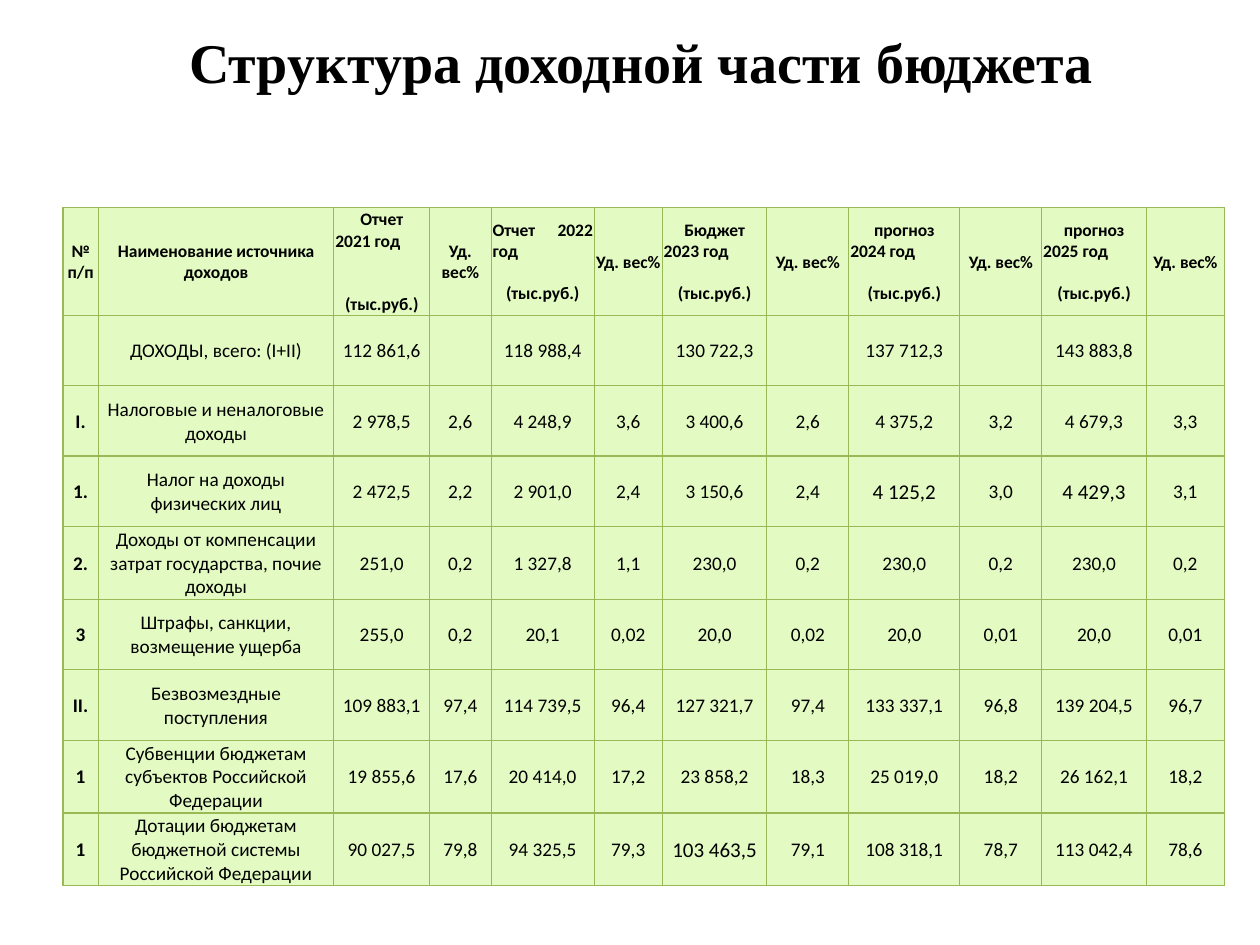
from lxml import etree
from pptx import Presentation
from pptx.dml.color import RGBColor
from pptx.enum.text import MSO_ANCHOR, MSO_AUTO_SIZE, PP_ALIGN
from pptx.oxml.ns import qn
from pptx.util import Cm, Pt

CENTER, LEFT, JUSTIFY = PP_ALIGN.CENTER, PP_ALIGN.LEFT, PP_ALIGN.JUSTIFY
MIDDLE = MSO_ANCHOR.MIDDLE
NO_AUTOFIT = MSO_AUTO_SIZE.NONE
TITLE_ONLY = 5

COLORS = {"text": "000000", "cell": "E3FBC2", "border": "98B955"}
COLUMN_WIDTHS = [0.71, 4.75, 1.93, 1.24, 2.08, 1.37, 2.11, 1.65, 2.24, 1.65, 2.11, 1.57]
HEADER_HEIGHT, ROW_HEIGHT = 2.15, 1.42

SHARE = "Уд. вес%"
UNIT = "(тыс.руб.)"
# Period heading lines with their alignment, and the gap in points above the unit
PERIODS = [
    ([("Отчет", CENTER), ("2021 год", LEFT)], 24),
    ([("Отчет 2022 год", JUSTIFY)], 12),
    ([("Бюджет", CENTER), ("2023 год", LEFT)], 12),
    ([("прогноз", CENTER), ("2024 год", LEFT)], 12),
    ([("прогноз", CENTER), ("2025 год", LEFT)], 12),
]
INCOME_ROWS = [
    ["", "ДОХОДЫ, всего: (I+II)", "112 861,6", "", "118 988,4", "",
     "130 722,3", "", "137 712,3", "", "143 883,8", ""],
    ["I.", "Налоговые и неналоговые доходы", "2 978,5", "2,6", "4 248,9", "3,6",
     "3 400,6", "2,6", "4 375,2", "3,2", "4 679,3", "3,3"],
    ["1.", "Налог на доходы физических лиц", "2 472,5", "2,2", "2 901,0", "2,4",
     "3 150,6", "2,4", "4 125,2", "3,0", "4 429,3", "3,1"],
    ["2.", "Доходы от компенсации затрат государства, почие доходы", "251,0", "0,2",
     "1 327,8", "1,1", "230,0", "0,2", "230,0", "0,2", "230,0", "0,2"],
    ["3", "Штрафы, санкции, возмещение ущерба", "255,0", "0,2", "20,1", "0,02",
     "20,0", "0,02", "20,0", "0,01", "20,0", "0,01"],
    ["II.", "Безвозмездные поступления", "109 883,1", "97,4", "114 739,5", "96,4",
     "127 321,7", "97,4", "133 337,1", "96,8", "139 204,5", "96,7"],
    ["1", "Субвенции бюджетам субъектов Российской Федерации", "19 855,6", "17,6",
     "20 414,0", "17,2", "23 858,2", "18,3", "25 019,0", "18,2", "26 162,1", "18,2"],
    ["1", "Дотации бюджетам бюджетной системы Российской Федерации", "90 027,5", "79,8",
     "94 325,5", "79,3", "103 463,5", "79,1", "108 318,1", "78,7", "113 042,4", "78,6"],
]
LARGER_VALUES = {"4 125,2", "4 429,3", "103 463,5"}


class SlideBuilder:
    def __init__(self, slide):
        self.slide = slide
        self.body_font = "Calibri"
        self.title_font = "Times New Roman"

    def format_paragraph(self, paragraph, text, font, size, bold, align=CENTER):
        paragraph.text = text
        paragraph.alignment = align
        paragraph.font.name = font
        paragraph.font.size = Pt(size)
        paragraph.font.bold = bold
        paragraph.font.color.rgb = RGBColor.from_string(COLORS["text"])

    def title(self, text, left, top, width, height):
        shape = self.slide.shapes.title
        shape.left, shape.top = Cm(left), Cm(top)
        shape.width, shape.height = Cm(width), Cm(height)
        frame = shape.text_frame
        frame.auto_size = NO_AUTOFIT
        frame.vertical_anchor = MIDDLE
        frame.margin_top, frame.margin_bottom = Cm(0), Cm(1.73)
        self.format_paragraph(frame.paragraphs[0], text, self.title_font, 32, True)

    def table(self, left, top, row_count):
        height = HEADER_HEIGHT + ROW_HEIGHT * (row_count - 1)
        table = self.slide.shapes.add_table(
            row_count, len(COLUMN_WIDTHS), Cm(left), Cm(top),
            Cm(sum(COLUMN_WIDTHS)), Cm(height)).table
        table.first_row = table.horz_banding = False
        for column, width in zip(table.columns, COLUMN_WIDTHS):
            column.width = Cm(width)
        for index, row in enumerate(table.rows):
            row.height = Cm(ROW_HEIGHT if index else HEADER_HEIGHT)
        for cell in table.iter_cells():
            self.style_cell(cell)
        return table

    def style_cell(self, cell):
        cell.vertical_anchor = MIDDLE
        cell.margin_left = cell.margin_right = cell.margin_top = Cm(0.03)
        cell.margin_bottom = Cm(0)
        properties = cell._tc.get_or_add_tcPr()
        for side in ("a:lnL", "a:lnR", "a:lnT", "a:lnB"):
            line = etree.SubElement(properties, qn(side), w=str(Pt(0.75)))
            fill = etree.SubElement(line, qn("a:solidFill"))
            etree.SubElement(fill, qn("a:srgbClr"), val=COLORS["border"])
        cell.fill.solid()
        cell.fill.fore_color.rgb = RGBColor.from_string(COLORS["cell"])

    def cell_text(self, cell, text, size, bold):
        self.format_paragraph(cell.text_frame.paragraphs[0], text, self.body_font, size, bold)

    def period_heading(self, cell, lines, unit_gap):
        frame = cell.text_frame
        for index, (text, align) in enumerate(lines + [(UNIT, CENTER)]):
            paragraph = frame.add_paragraph() if index else frame.paragraphs[0]
            self.format_paragraph(paragraph, text, self.body_font, 10, True, align)
        paragraph.space_before = Pt(unit_gap)


def main():
    presentation = Presentation()
    presentation.slide_width, presentation.slide_height = Cm(25.4), Cm(19.05)
    slide = presentation.slides.add_slide(presentation.slide_layouts[TITLE_ONLY])
    builder = SlideBuilder(slide)
    builder.title("Структура доходной части бюджета", 1.5, 0.91, 22.86, 2.39)

    table = builder.table(1.27, 4.19, len(INCOME_ROWS) + 1)
    for column, text in enumerate(["№ п/п", "Наименование источника доходов"]):
        builder.cell_text(table.cell(0, column), text, 10, True)
    for index, (lines, unit_gap) in enumerate(PERIODS):
        column = 2 + 2 * index
        builder.period_heading(table.cell(0, column), lines, unit_gap)
        builder.cell_text(table.cell(0, column + 1), SHARE, 10, True)

    for row, values in enumerate(INCOME_ROWS, start=1):
        for column, value in enumerate(values):
            size = 12 if value in LARGER_VALUES else 11
            builder.cell_text(table.cell(row, column), value, size, column == 0)

    presentation.save("out.pptx")


if __name__ == "__main__":
    main()
